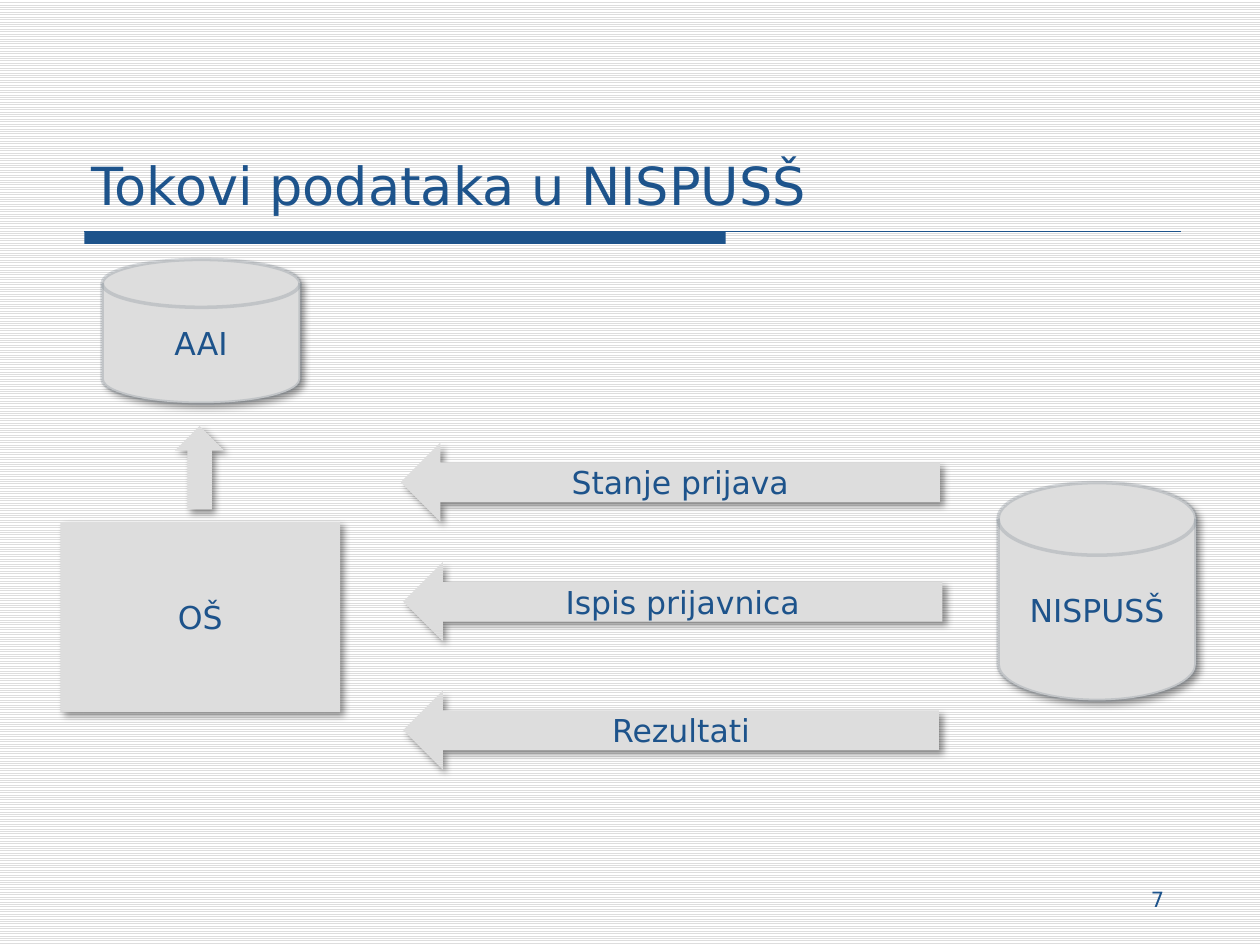
from lxml.etree import SubElement
from pptx import Presentation
from pptx.dml.color import RGBColor
from pptx.enum.dml import MSO_PATTERN
from pptx.enum.shapes import MSO_CONNECTOR, MSO_SHAPE
from pptx.enum.text import MSO_ANCHOR, PP_ALIGN
from pptx.oxml import parse_xml
from pptx.oxml.ns import nsdecls, qn
from pptx.util import Cm, Pt

BLUE = RGBColor(0x1D, 0x53, 0x8B)
GREY = RGBColor(0xDD, 0xDD, 0xDD)
OUTLINE = RGBColor(0x79, 0x84, 0x8F)
WHITE = RGBColor(0xFF, 0xFF, 0xFF)
FONT = "DejaVu Sans"

# Lengths in cm: left, top, width, height
TITLE = ("Tokovi podataka u NISPUSŠ", (1.6, 3.12, 22.23, 1.37))
PAGE_NUMBER = ("7", (18.21, 17.75, 5.51, 0.99))
RULE_LEFT, RULE_TOP, RULE_RIGHT = 1.7, 4.67, 23.8
BAR_WIDTH, BAR_HEIGHT = 12.93, 0.25

SYSTEMS = [
    ("OŠ", MSO_SHAPE.RECTANGLE, (1.22, 10.52, 5.64, 3.84)),
    ("NISPUSŠ", MSO_SHAPE.FLOWCHART_MAGNETIC_DISK, (20.12, 9.73, 3.99, 4.39)),
    ("AAI", MSO_SHAPE.FLOWCHART_MAGNETIC_DISK, (2.06, 5.23, 3.99, 2.9)),
]
FLOWS = [
    ("Stanje prijava", MSO_SHAPE.LEFT_ARROW, (8.08, 8.92, 10.87, 1.6)),
    ("Ispis prijavnica", MSO_SHAPE.LEFT_ARROW, (8.13, 11.33, 10.87, 1.6)),
    ("Rezultati", MSO_SHAPE.LEFT_ARROW, (8.13, 13.92, 10.8, 1.6)),
    ("", MSO_SHAPE.UP_ARROW, (3.53, 8.59, 0.99, 1.68)),
]

SHADOW = f"""<a:effectLst {nsdecls("a")}>
  <a:outerShdw blurRad="{Pt(4)}" dist="{Pt(3)}" dir="2700000" algn="tl" rotWithShape="0">
    <a:srgbClr val="000000"><a:alpha val="40000"/></a:srgbClr>
  </a:outerShdw>
</a:effectLst>"""


def write(shape, text, size, alignment, anchor):
    frame = shape.text_frame
    frame.word_wrap = True
    frame.vertical_anchor = anchor
    frame.text = text
    paragraph = frame.paragraphs[0]
    paragraph.alignment = alignment
    for run in paragraph.runs:
        run.font.name = FONT
        run.font.size = Pt(size)
        run.font.color.rgb = BLUE


def add_text(slide, text, box, size, alignment, anchor):
    shape = slide.shapes.add_textbox(*map(Cm, box))
    write(shape, text, size, alignment, anchor)


def add_plain_shape(slide, kind, box, color):
    """Add a filled shape without outline or shadow."""
    shape = slide.shapes.add_shape(kind, *map(Cm, box))
    shape.shadow.inherit = False
    shape.fill.solid()
    shape.fill.fore_color.rgb = color
    shape.line.fill.background()
    return shape


def add_title_rule(slide):
    add_plain_shape(slide, MSO_SHAPE.RECTANGLE,
                    (RULE_LEFT, RULE_TOP, BAR_WIDTH, BAR_HEIGHT), BLUE)
    line = slide.shapes.add_connector(
        MSO_CONNECTOR.STRAIGHT,
        *map(Cm, (RULE_LEFT, RULE_TOP, RULE_RIGHT, RULE_TOP)))
    line.line.color.rgb = BLUE
    line.line.width = Pt(0.75)
    SubElement(line._element.spPr, qn("a:effectLst"))


def add_diagram_shape(slide, text, kind, box):
    shape = add_plain_shape(slide, kind, box, GREY)
    if kind == MSO_SHAPE.FLOWCHART_MAGNETIC_DISK:
        shape.line.color.rgb = OUTLINE
        shape.line.width = Pt(2)
        color = shape.line._ln.find(".//" + qn("a:srgbClr"))
        SubElement(color, qn("a:alpha"), val="27000")
    properties = shape._element.spPr
    properties.replace(properties.find(qn("a:effectLst")), parse_xml(SHADOW))
    if text:
        write(shape, text, 18, PP_ALIGN.CENTER, MSO_ANCHOR.MIDDLE)


def main():
    presentation = Presentation()
    presentation.slide_width, presentation.slide_height = Cm(25.4), Cm(19.05)
    slide = presentation.slides.add_slide(presentation.slide_layouts[6])

    background = slide.background.fill
    background.patterned()
    background.pattern = MSO_PATTERN.LIGHT_HORIZONTAL
    background.fore_color.rgb = GREY
    background.back_color.rgb = WHITE

    add_title_rule(slide)
    add_text(slide, *TITLE, 30, PP_ALIGN.LEFT, MSO_ANCHOR.BOTTOM)
    add_text(slide, *PAGE_NUMBER, 12, PP_ALIGN.RIGHT, MSO_ANCHOR.TOP)
    for text, kind, box in SYSTEMS + FLOWS:
        add_diagram_shape(slide, text, kind, box)

    presentation.save("out.pptx")


if __name__ == "__main__":
    main()
